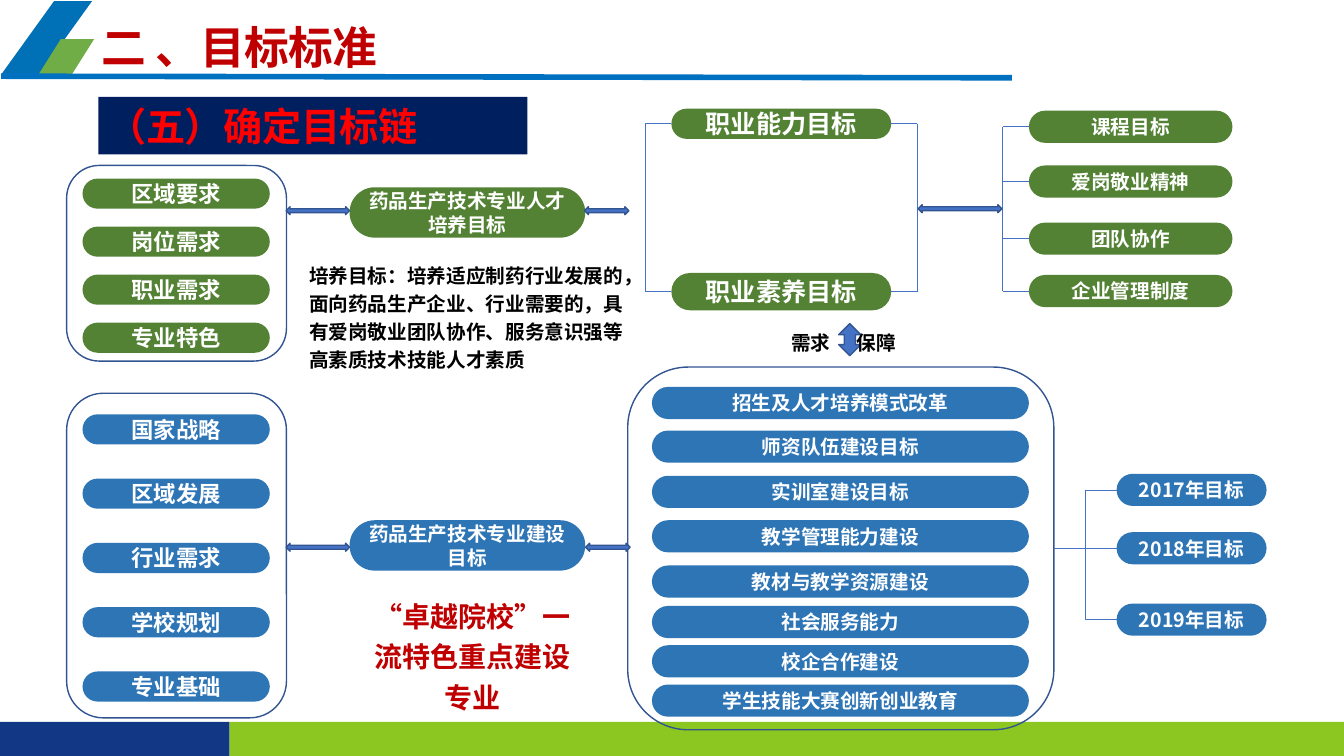
from lxml import etree
from pptx import Presentation
from pptx.dml.color import RGBColor
from pptx.enum.shapes import MSO_CONNECTOR as CONN, MSO_SHAPE as SHAPE
from pptx.enum.text import MSO_ANCHOR as ANCHOR, PP_ALIGN as ALIGN
from pptx.oxml.ns import qn
from pptx.util import Cm, Pt

FONT = "Noto Sans CJK SC"
WHITE = RGBColor(0xFF, 0xFF, 0xFF)
BLACK = RGBColor(0x00, 0x00, 0x00)
RED = RGBColor(0xFF, 0x00, 0x00)
DARK_RED = RGBColor(0xC0, 0x00, 0x00)
GREEN = RGBColor(0x54, 0x82, 0x35)
BLUE = RGBColor(0x2E, 0x75, 0xB6)
ARROW_BLUE = RGBColor(0x44, 0x72, 0xC4)
OUTLINE = RGBColor(0x32, 0x54, 0x91)
NAVY = RGBColor(0x00, 0x1F, 0x5F)
LOGO_BLUE = RGBColor(0x00, 0x71, 0xB7)
LOGO_GREEN = RGBColor(0x70, 0xAD, 0x47)
RULE_BLUE = RGBColor(0x00, 0x70, 0xC0)
FOOTER_GREEN = RGBColor(0x8C, 0xC7, 0x21)
FOOTER_BLUE = RGBColor(0x12, 0x38, 0x85)

prs = Presentation()
prs.slide_width, prs.slide_height = Cm(33.87), Cm(19.05)
shapes = prs.slides.add_slide(prs.slide_layouts[6]).shapes


def add_item(text, x, y, w, h, shape=None, fill=None, outline=None, adj=None,
             size=14, color=WHITE, align=ALIGN.CENTER, anchor=ANCHOR.MIDDLE,
             inset=None, leading=None, spacing=None, tab=None):
    """Add a preset shape, or a text box when no shape is given."""
    box = (Cm(x), Cm(y), Cm(w), Cm(h))
    if shape is None:
        s = shapes.add_textbox(*box)
    else:
        s = shapes.add_shape(shape, *box)
        s.shadow.inherit = False
        if fill is None:
            s.fill.background()
        else:
            s.fill.solid()
            s.fill.fore_color.rgb = fill
        if outline is None:
            s.line.fill.background()
        else:
            s.line.color.rgb = outline
            s.line.width = Pt(1)
        if adj is not None:
            s.adjustments[0] = adj
    if not text:
        return s
    tf = s.text_frame
    tf.word_wrap = True
    tf.vertical_anchor = anchor
    if inset is not None:
        tf.margin_left = tf.margin_right = tf.margin_top = tf.margin_bottom = Cm(inset)
    p = tf.paragraphs[0]
    p.alignment = align
    if leading:
        p.line_spacing = leading
    if tab:
        tabs = etree.SubElement(p._p.get_or_add_pPr(), qn("a:tabLst"))
        etree.SubElement(tabs, qn("a:tab"), pos=str(Cm(tab)), algn="l")
    r = p.add_run()
    r.text = text
    r.font.name, r.font.size, r.font.bold = FONT, Pt(size), True
    r.font.color.rgb = color
    rPr = r._r.get_or_add_rPr()
    etree.SubElement(rPr, qn("a:ea"), typeface=FONT)
    if spacing:
        rPr.set("spc", str(spacing))
    return s


def add_line(kind, x1, y1, x2, y2, color=ARROW_BLUE, width=0.5):
    c = shapes.add_connector(kind, Cm(x1), Cm(y1), Cm(x2), Cm(y2))
    c.line.color.rgb = color
    c.line.width = Pt(width)
    etree.SubElement(c._element.spPr, qn("a:effectLst"))
    return c


# Header and footer decoration
add_item("", 0.03, 0.03, 2.29, 1.85, SHAPE.PARALLELOGRAM, LOGO_BLUE, adj=0.72)
add_item("", 0.97, 0.99, 1.4, 0.89, SHAPE.PARALLELOGRAM, LOGO_GREEN, adj=0.63)
add_item("", 5.78, 18.19, 28.09, 0.86, SHAPE.RECTANGLE, FOOTER_GREEN)
add_item("", 0, 18.19, 5.78, 0.86, SHAPE.RECTANGLE, FOOTER_BLUE)
add_line(CONN.STRAIGHT, 0.03, 1.92, 25.5, 1.96, RULE_BLUE, 4)

# Titles
add_item("", 2.48, 2.44, 10.81, 1.45, SHAPE.RECTANGLE, NAVY)
add_item("（五）确定目标链", 2.71, 2.57, 11.3, 1.22, size=28, color=RED,
         align=ALIGN.LEFT, anchor=ANCHOR.TOP, inset=0, spacing=-30)
add_item("二 、目标标准", 1.98, 0.2, 8.13, 1.65, size=32, color=DARK_RED,
         anchor=ANCHOR.BOTTOM, inset=0, spacing=-40)

# Frames around the groups
for frame in ((1.68, 4.17, 5.54, 4.93), (1.68, 9.91, 5.54, 8.18)):
    add_item("", *frame, SHAPE.ROUNDED_RECTANGLE, outline=OUTLINE)
build_frame = add_item("", 15.82, 9.25, 10.74, 9.14,
                       SHAPE.ROUNDED_RECTANGLE, outline=OUTLINE)

# Pill columns: left, width, fill, text size, then (label, top, height)
needs = ["区域要求", "岗位需求", "职业需求", "专业特色"]
bases = ["国家战略", "区域发展", "行业需求", "学校规划", "专业基础"]
columns = {
    "needs": (2.08, 4.72, GREEN, 16,
              [(t, 4.5 + 1.21 * i, 0.76) for i, t in enumerate(needs)]),
    "bases": (2.08, 4.72, BLUE, 16,
              [(t, 10.44 + 1.62 * i, 0.76) for i, t in enumerate(bases)]),
    "training": (8.81, 5.94, GREEN, 14, [("药品生产技术专业人才培养目标", 4.72, 1.27)]),
    "building": (8.81, 5.94, BLUE, 14, [("药品生产技术专业建设目标", 13.11, 1.27)]),
    "abilities": (16.92, 5.54, GREEN, 18,
                  [("职业能力目标", 2.74, 0.76), ("职业素养目标", 6.88, 0.94)]),
    "courses": (25.93, 5.13, GREEN, 14,
                [("课程目标", 2.79, 0.81), ("爱岗敬业精神", 4.17, 0.81),
                 ("团队协作", 5.61, 0.81), ("企业管理制度", 6.93, 0.81)]),
    "projects": (16.43, 9.5, BLUE, 14,
                 [("招生及人才培养模式改革", 9.75, 0.81), ("师资队伍建设目标", 10.85, 0.81),
                  ("实训室建设目标", 11.99, 0.81), ("教学管理能力建设", 13.11, 0.81),
                  ("教材与教学资源建设", 14.25, 0.81), ("社会服务能力", 15.27, 0.81),
                  ("校企合作建设", 16.26, 0.81), ("学生技能大赛创新创业教育", 17.25, 0.81)]),
    "years": (28.14, 3.78, BLUE, 14,
              [("2017年目标", 11.94, 0.81), ("2018年目标", 13.41, 0.81),
               ("2019年目标", 15.21, 0.81)]),
}
pills = {}
for name, (x, w, fill, size, items) in columns.items():
    pills[name] = [add_item(t, x, y, w, h, SHAPE.ROUNDED_RECTANGLE, fill, adj=0.5, size=size)
                   for t, y, h in items]

# Brackets: one spine each, with a stub to every pill
for name, spine_x, side in (("abilities", 16.26, 1), ("abilities", 23.11, 3),
                            ("courses", 25.27, 1)):
    x, w, _, _, items = columns[name]
    middles = [y + h / 2 for _, y, h in items]
    add_line(CONN.STRAIGHT, spine_x, middles[0], spine_x, middles[-1])
    for pill, y in zip(pills[name], middles):
        stub = add_line(CONN.STRAIGHT, spine_x, y, x if side == 1 else x + w, y)
        stub.end_connect(pill, side)

# Fan from the building frame to the yearly goals
for pill, (_, y, h) in zip(pills["years"], columns["years"][4]):
    elbow = add_line(CONN.ELBOW, 26.56, 13.82, 28.14, y + h / 2)
    elbow.begin_connect(build_frame, 3)
    elbow.end_connect(pill, 1)

# Double arrows
for x, y, w, h, turn in ((7.21, 5.21, 1.6, 0.2, 0), (14.73, 5.21, 1.12, 0.2, 0),
                         (7.21, 13.69, 1.6, 0.2, 0), (14.76, 13.69, 1.12, 0.2, 0),
                         (23.14, 5.16, 2.11, 0.2, 0), (21.01, 8.28, 0.81, 0.56, 90)):
    arrow = add_item("", x, y, w, h, SHAPE.LEFT_RIGHT_ARROW, ARROW_BLUE, OUTLINE)
    arrow.rotation = turn

# Free text
add_item("培养目标：培养适应制药行业发展的，面向药品生产企业、行业需要的，"
         "具有爱岗敬业团队协作、服务意识强等高素质技术技能人才素质",
         7.54, 6.4, 8.46, 3.12, color=BLACK, align=ALIGN.LEFT,
         anchor=ANCHOR.TOP, leading=1.2)
add_item("需求\t保障", 19.69, 8.1, 3.63, 0.97, color=BLACK, align=ALIGN.LEFT,
         anchor=ANCHOR.TOP, leading=1.2, tab=1.65)
add_item("“卓越院校”一流特色重点建设专业", 9.07, 14.81, 5.69, 3.33, size=20,
         color=DARK_RED, anchor=ANCHOR.TOP, leading=1.2)

prs.save("out.pptx")
